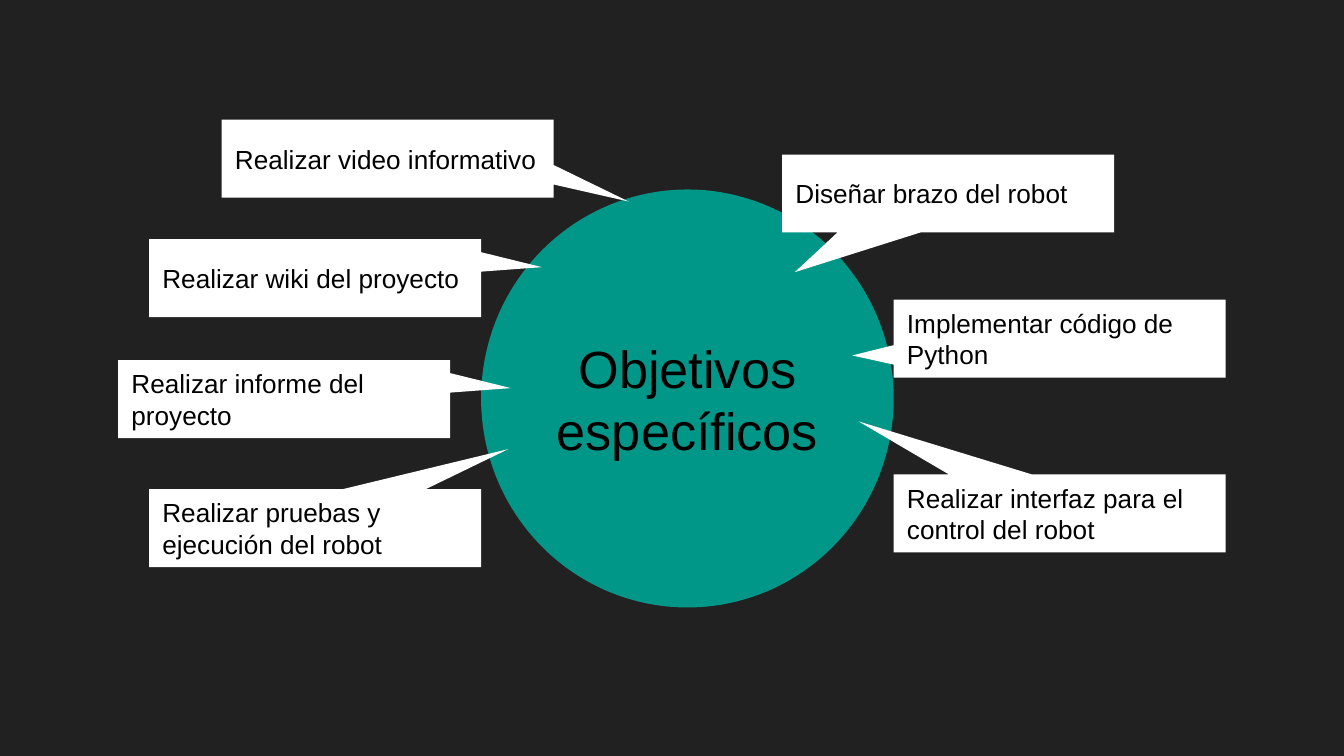
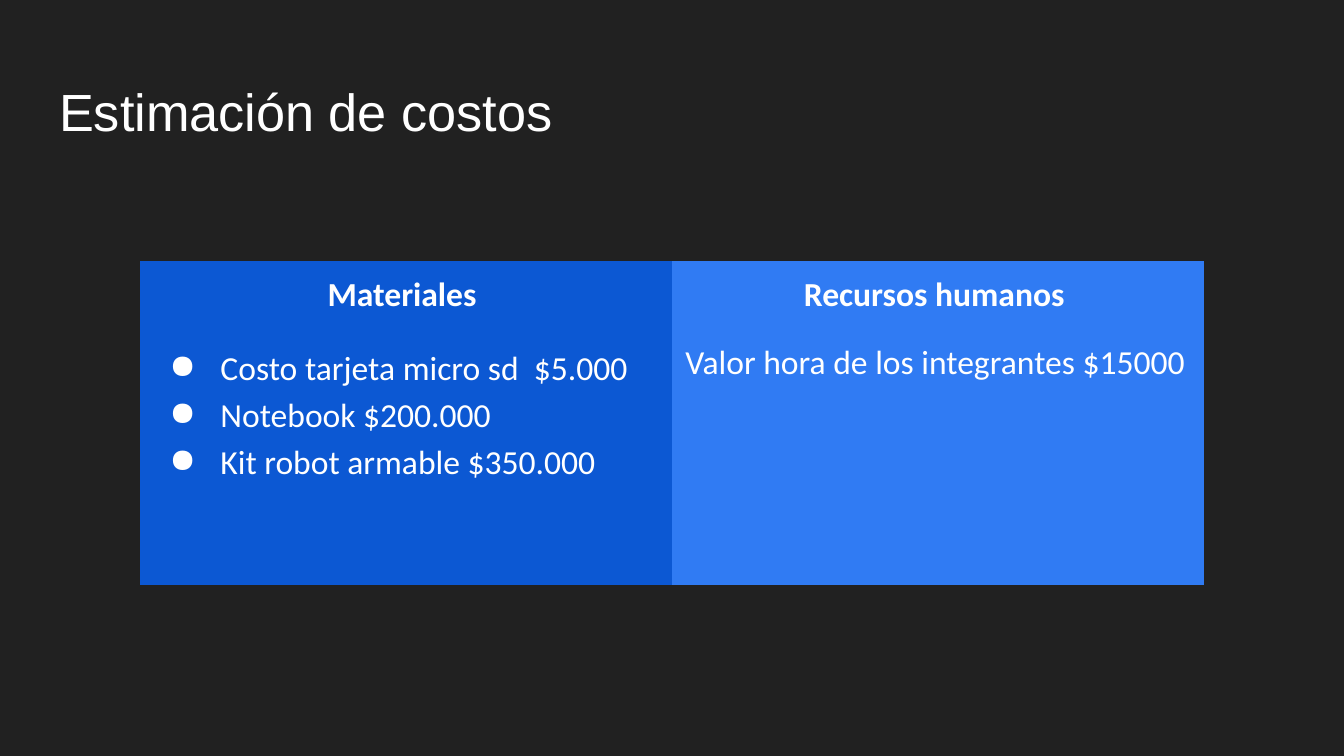
import pptx
import pptx.util
import pptx.dml.color
import pptx.enum.shapes
import pptx.enum.text
import pptx.oxml.ns
from lxml import etree

COLORS = {
    "background": "212121",
    "circle": "009688",
    "white": "FFFFFF",
    "black": "000000",
    "materials": "0C58D3",
    "people": "307BF3",
}
NO_TABLE_STYLE = "{2D5ABB26-0587-4C30-8999-92F81FD0307C}"
ALIGN = pptx.enum.text.PP_ALIGN
ANCHOR = pptx.enum.text.MSO_ANCHOR
SHAPES = pptx.enum.shapes.MSO_SHAPE

presentation = pptx.Presentation()
presentation.slide_width = pptx.util.Inches(10)
presentation.slide_height = pptx.util.Inches(5.625)
column = presentation.slide_width / 100
row = presentation.slide_height / 100


def paint(fill, color):
    fill.solid()
    fill.fore_color.rgb = pptx.dml.color.RGBColor.from_string(COLORS[color])


def write(paragraph, text, size, color, font="Arial", bold=False, align=ALIGN.LEFT):
    paragraph.alignment = align
    run = paragraph.add_run()
    run.text = text
    run.font.size = pptx.util.Pt(size)
    run.font.name = font
    run.font.bold = bold
    run.font.color.rgb = pptx.dml.color.RGBColor.from_string(COLORS[color])


paint(presentation.slide_master.background.fill, "background")

slide = presentation.slides.add_slide(presentation.slide_layouts[6])
wedge = SHAPES.RECTANGULAR_CALLOUT
callout_size = (24.7, 10.31)
goals = [
    ("Diseñar brazo del robot", 58.2, 20.44, (-0.462, 1.01)),
    ("Implementar código de Python", 66.5, 39.64, (-0.625, 0.216)),
    ("Realizar interfaz para el control del robot", 66.5, 62.76, (-0.606, -1.181)),
    ("Realizar pruebas y ejecución del robot", 11.1, 64.71, (0.582, -1.014)),
    ("Realizar informe del proyecto", 8.8, 47.64, (0.683, -0.141)),
    ("Realizar wiki del proyecto", 11.1, 31.64, (0.683, -0.141)),
    ("Realizar video informativo", 16.5, 15.82, (0.726, 0.552)),
]
items = [("Objetivos específicos", SHAPES.OVAL, 35.8, 25.07, 30.7, 55.29, (), "circle", 28, ALIGN.CENTER)]
for text, left, top, tip in goals:
    items.append((text, wedge, left, top, *callout_size, tip, "white", 14, ALIGN.LEFT))

for text, kind, left, top, width, height, tip, color, size, align in items:
    shape = slide.shapes.add_shape(
        kind, int(left * column), int(top * row), int(width * column), int(height * row)
    )
    for index, value in enumerate(tip):
        shape.adjustments[index] = value
    shape.shadow.inherit = False
    paint(shape.fill, color)
    shape.line.fill.background()
    frame = shape.text_frame
    frame.word_wrap = True
    frame.vertical_anchor = ANCHOR.MIDDLE
    frame.margin_left = frame.margin_right = pptx.util.Inches(0.1)
    frame.margin_top = frame.margin_bottom = pptx.util.Inches(0.1)
    write(frame.paragraphs[0], text, size, "black", align=align)

slide = presentation.slides.add_slide(presentation.slide_layouts[5])
title = slide.shapes.title
title.left, title.top = int(3.4 * column), int(8.71 * row)
title.width, title.height = int(93.2 * column), int(11.2 * row)
frame = title.text_frame
frame.auto_size = pptx.enum.text.MSO_AUTO_SIZE.NONE
frame.vertical_anchor = ANCHOR.TOP
frame.margin_left = frame.margin_right = pptx.util.Inches(0.1)
frame.margin_top = frame.margin_bottom = pptx.util.Inches(0.1)
write(frame.paragraphs[0], "Estimación de costos", 28, "white")

costs = [
    ("Materiales ", "materials", True,
     ["Costo tarjeta micro sd  $5.000", "Notebook $200.000", "Kit robot armable $350.000"]),
    ("Recursos humanos ", "people", False, ["Valor hora de los integrantes $15000"]),
]
row_heights = (8.89, 33.96)
table = slide.shapes.add_table(
    2, 2, int(10.4 * column), int(34.49 * row), int(79.2 * column), int(sum(row_heights) * row)
).table
table.first_row = table.horz_banding = False
table._tbl.tblPr.find(pptx.oxml.ns.qn("a:tableStyleId")).text = NO_TABLE_STYLE
for table_row, height in zip(table.rows, row_heights):
    table_row.height = int(height * row)

for index, (heading, color, bulleted, lines) in enumerate(costs):
    for level, texts in enumerate(([heading], lines)):
        cell = table.cell(level, index)
        paint(cell.fill, color)
        cell.margin_left = cell.margin_right = pptx.util.Inches(0.1)
        cell.margin_top = cell.margin_bottom = pptx.util.Inches(0.1)
        for position, text in enumerate(texts):
            frame = cell.text_frame
            paragraph = frame.add_paragraph() if position else frame.paragraphs[0]
            align = ALIGN.LEFT if level else ALIGN.CENTER
            write(paragraph, text, 18, "white", "Calibri", level == 0, align)
            if level and bulleted:
                paragraph.line_spacing = 1.15
                properties = paragraph._p.get_or_add_pPr()
                properties.set("marL", str(pptx.util.Inches(0.5)))
                properties.set("indent", str(pptx.util.Inches(-0.38)))
                bullet_color = etree.SubElement(properties, pptx.oxml.ns.qn("a:buClr"))
                etree.SubElement(bullet_color, pptx.oxml.ns.qn("a:srgbClr"), val=COLORS["white"])
                etree.SubElement(properties, pptx.oxml.ns.qn("a:buChar"), char="●")

presentation.save("out.pptx")
